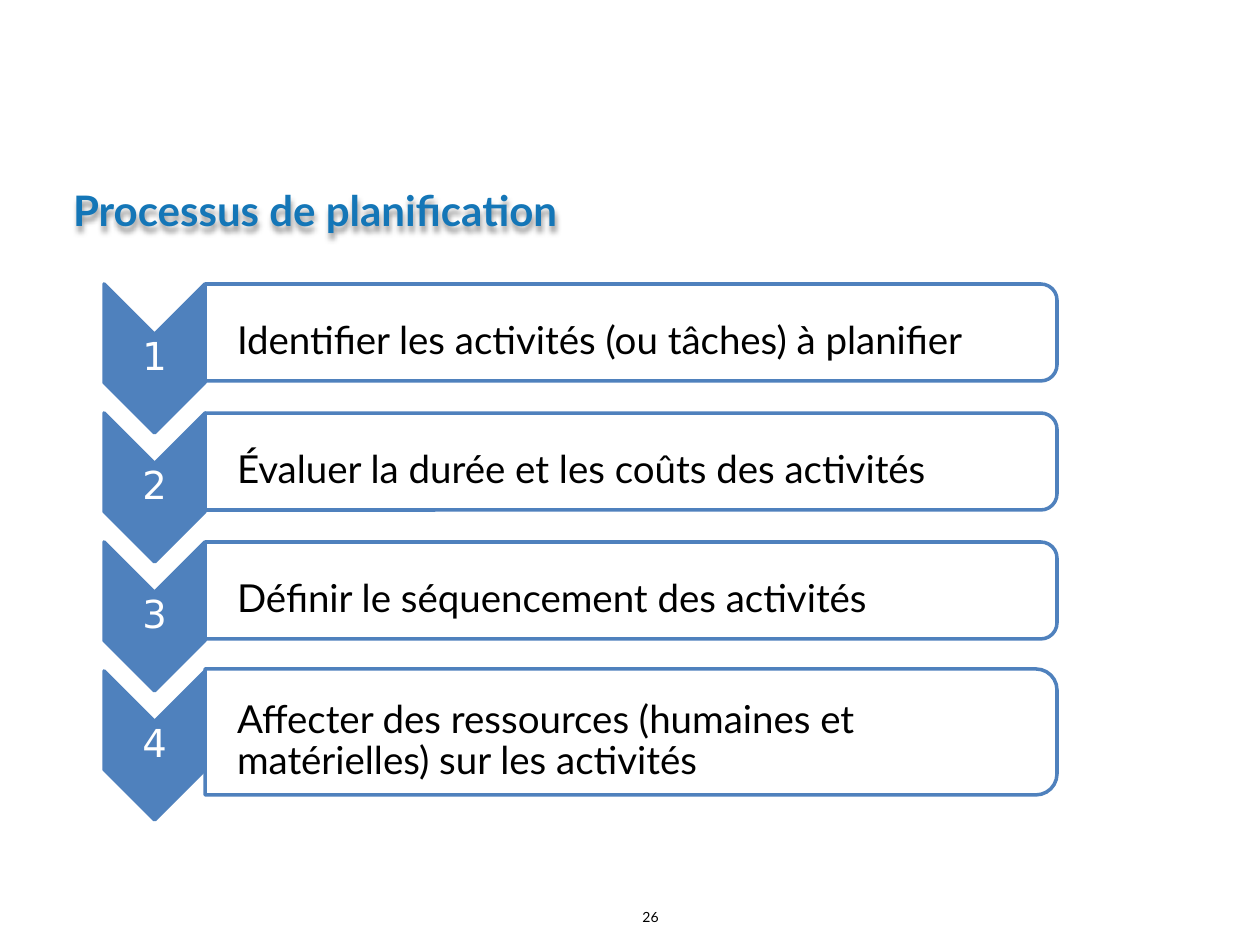
from dataclasses import dataclass

from lxml import etree
from pptx import Presentation
from pptx.dml.color import RGBColor
from pptx.enum.shapes import MSO_SHAPE
from pptx.enum.text import MSO_ANCHOR, PP_ALIGN
from pptx.oxml.ns import qn
from pptx.util import Emu, Pt

CHEVRON = MSO_SHAPE.CHEVRON
ROUNDED_TOP = MSO_SHAPE.ROUND_2_SAME_RECTANGLE
MIDDLE = MSO_ANCHOR.MIDDLE
LEFT = PP_ALIGN.LEFT
CENTER = PP_ALIGN.CENTER
EMU_PER_PX = 914400 / 126


@dataclass(frozen=True)
class Theme:
    accent: RGBColor = RGBColor(0x4F, 0x81, 0xBD)
    title: RGBColor = RGBColor(0x14, 0x76, 0xB7)
    dark: RGBColor = RGBColor(0, 0, 0)
    light: RGBColor = RGBColor(255, 255, 255)
    body_font: str = "Lato"
    number_font: str = "DejaVu Sans"
    title_size: int = 24
    step_size: int = 22
    page_size: int = 8
    line_width: int = 2


@dataclass(frozen=True)
class Box:
    left: int
    top: int
    width: int
    height: int


@dataclass(frozen=True)
class Step:
    text: str
    label: Box


THEME = Theme()
STEP_TOP = 284
STEP_PITCH = 129
CHEVRON_LEFT, CHEVRON_WIDTH, CHEVRON_HEIGHT = 104, 101, 149
LABEL_LEFT, LABEL_WIDTH, LABEL_HEIGHT = 205, 852, 97
LAST_LABEL = Box(LABEL_LEFT, 669, LABEL_WIDTH, 126)
TEXTS = (
    "Identifier les activités (ou tâches) à planifier",
    "Évaluer la durée et les coûts des activités",
    "Définir le séquencement des activités",
)


def px(length: float) -> Emu:
    return Emu(round(length * EMU_PER_PX))


def set_margins(text_frame, left: int, top: int, right: int, bottom: int) -> None:
    text_frame.margin_left, text_frame.margin_top = px(left), px(top)
    text_frame.margin_right, text_frame.margin_bottom = px(right), px(bottom)


def write(text_frame, text: str, font: str, size: int, color: RGBColor,
          bold: bool = False) -> None:
    text_frame.word_wrap = True
    text_frame.text = text
    run_font = text_frame.paragraphs[0].runs[0].font
    run_font.name, run_font.size, run_font.bold = font, Pt(size), bold
    run_font.color.rgb = color


def add_turned_shape(slide, preset, box: Box, adjustments: tuple[float, ...],
                     fill: RGBColor):
    left = box.left + (box.width - box.height) / 2
    top = box.top + (box.height - box.width) / 2
    shape = slide.shapes.add_shape(
        preset, px(left), px(top), px(box.height), px(box.width))
    shape.rotation = 90
    shape.shadow.inherit = False
    for index, value in enumerate(adjustments):
        shape.adjustments[index] = value
    shape.fill.solid()
    shape.fill.fore_color.rgb = fill
    shape.line.color.rgb = THEME.accent
    shape.line.width = Pt(THEME.line_width)
    shape.text_frame.vertical_anchor = MIDDLE
    shape.element.txBody.bodyPr.set("vert", "vert270")
    return shape


def add_step(slide, number: int, step: Step) -> None:
    chevron_box = Box(CHEVRON_LEFT, STEP_TOP + (number - 1) * STEP_PITCH,
                      CHEVRON_WIDTH, CHEVRON_HEIGHT)
    chevron = add_turned_shape(slide, CHEVRON, chevron_box, (0.5,), THEME.accent)
    set_margins(chevron.text_frame, 1, 1, 1, 1)
    write(chevron.text_frame, str(number), THEME.number_font,
          THEME.step_size, THEME.light)
    paragraph = chevron.text_frame.paragraphs[0]
    paragraph.alignment, paragraph.line_spacing = CENTER, 0.9

    label = add_turned_shape(slide, ROUNDED_TOP, step.label, (0.167, 0), THEME.light)
    color = label.element.spPr.find(qn("a:solidFill")).find(qn("a:srgbClr"))
    etree.SubElement(color, qn("a:alpha"), val="90000")
    set_margins(label.text_frame, 20, 1, 1, 1)
    write(label.text_frame, step.text, THEME.body_font, THEME.step_size, THEME.dark)
    paragraph = label.text_frame.paragraphs[0]
    paragraph.alignment, paragraph.line_spacing = LEFT, 0.9
    properties = paragraph._p.get_or_add_pPr()
    properties.set("marL", str(px(31)))
    properties.set("indent", "0")


def add_text(slide, box: Box, text: str, size: int, color: RGBColor,
             bold: bool = False):
    shape = slide.shapes.add_textbox(
        px(box.left), px(box.top), px(box.width), px(box.height))
    write(shape.text_frame, text, THEME.body_font, size, color, bold)
    return shape


def add_title(slide) -> None:
    title = add_text(slide, Box(54, 155, 1227, 110), "Processus de planification",
                     THEME.title_size, THEME.title, bold=True)
    title.text_frame.vertical_anchor = MIDDLE
    set_margins(title.text_frame, 19, 19, 19, 19)
    title.shadow.inherit = False
    effects = title.element.spPr.find(qn("a:effectLst"))
    shadow = etree.SubElement(effects, qn("a:outerShdw"), blurRad=str(px(5)),
                              dist=str(px(5)), dir="5400000", rotWithShape="0")
    color = etree.SubElement(shadow, qn("a:srgbClr"), val=str(THEME.dark))
    etree.SubElement(color, qn("a:alpha"), val="40000")


def main() -> None:
    presentation = Presentation()
    presentation.slide_width, presentation.slide_height = px(1260), px(945)
    slide = presentation.slides.add_slide(presentation.slide_layouts[6])
    steps = [
        Step(text, Box(LABEL_LEFT, STEP_TOP + index * STEP_PITCH,
                       LABEL_WIDTH, LABEL_HEIGHT))
        for index, text in enumerate(TEXTS)
    ]
    steps.append(Step(
        "Affecter des ressources (humaines et matérielles) sur les activités",
        LAST_LABEL))
    for number, step in enumerate(steps, start=1):
        add_step(slide, number, step)
    add_text(slide, Box(630, 902, 412, 30), "26", THEME.page_size, THEME.dark)
    add_title(slide)
    presentation.save("out.pptx")


if __name__ == "__main__":
    main()
